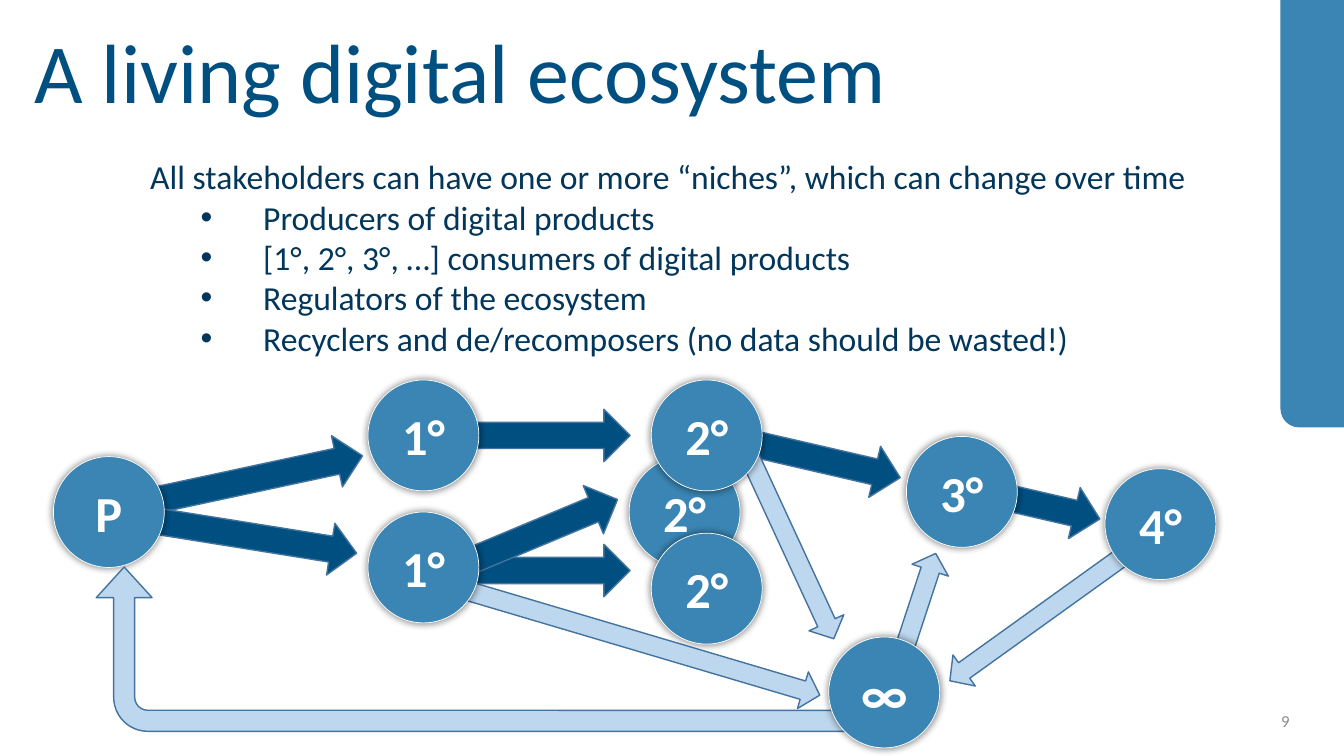
from lxml import etree
from pptx import Presentation
from pptx.dml.color import RGBColor
from pptx.enum.shapes import MSO_SHAPE
from pptx.enum.text import MSO_ANCHOR, MSO_AUTO_SIZE, PP_ALIGN
from pptx.oxml import parse_xml
from pptx.oxml.ns import nsdecls, qn
from pptx.util import Inches, Pt

NAVY, BLUE, PALE, EDGE = "004F81", "3A85B3", "BDD7EE", "43739E"
INK, GREY, WHITE = "02365A", "8C8C8C", "FFFFFF"
SIZE = 1.1
STRONG, SLIM = 0.52, 0.38


def tint(code):
    return RGBColor.from_string(code)


def place(item, box):
    item.left, item.top, item.width, item.height = map(Inches, box)


def style(par, size, color, align=PP_ALIGN.LEFT, bold=False):
    par.alignment = align
    font = par.font
    font.name, font.size, font.bold = "Calibri", Pt(size), bold
    font.color.rgb = tint(color)


def add_form(slide, kind, box, fill, line=None, width=1, turn=0):
    form = slide.shapes.add_shape(kind, *map(Inches, box))
    form.rotation = turn
    form.shadow.inherit = False
    form.fill.solid()
    form.fill.fore_color.rgb = tint(fill)
    if line:
        form.line.color.rgb = tint(line)
        form.line.width = Pt(width)
    else:
        form.line.fill.background()
    return form


def add_title(slide, box):
    title = slide.shapes.title
    place(title, box)
    frame = title.text_frame
    frame.text = "A living digital ecosystem"
    frame.auto_size = MSO_AUTO_SIZE.NONE
    frame.vertical_anchor = MSO_ANCHOR.TOP
    par = frame.paragraphs[0]
    style(par, 60, NAVY)
    par.line_spacing = 0.9


def add_list(slide, box):
    body = slide.placeholders[1]
    place(body, box)
    frame = body.text_frame
    frame.auto_size = MSO_AUTO_SIZE.NONE
    lines = [
        "All stakeholders can have one or more “niches”, which can change over time",
        "Producers of digital products",
        "[1°, 2°, 3°, …] consumers of digital products",
        "Regulators of the ecosystem",
        "Recyclers and de/recomposers (no data should be wasted!)",
    ]
    frame.text = "\n".join(lines)
    for rank, par in enumerate(frame.paragraphs):
        style(par, 24, INK)
        par.space_before = Pt(0)
        props = par._p.get_or_add_pPr()
        if rank:
            par.level = 1
            props.set("marL", str(Inches(1.12)))
            props.set("indent", str(Inches(-0.62)))
            face = etree.SubElement(props, qn("a:buFont"))
            face.set("typeface", "Arial")
            etree.SubElement(props, qn("a:buChar")).set("char", "•")
        else:
            props.set("marL", "0")
            props.set("indent", "0")
            etree.SubElement(props, qn("a:buNone"))


def add_node(slide, left, top, label, size=36):
    node = add_form(slide, MSO_SHAPE.OVAL, (left, top, SIZE, SIZE), BLUE, WHITE, 0.5)
    props = node._element.spPr
    props.remove(props.find(qn("a:effectLst")))
    props.append(parse_xml(
        f'<a:effectLst {nsdecls("a")}><a:outerShdw blurRad="63500" sx="102000" '
        'sy="102000" algn="ctr" rotWithShape="0"><a:prstClr val="black">'
        '<a:alpha val="40000"/></a:prstClr></a:outerShdw></a:effectLst>'))
    frame = node.text_frame
    frame.word_wrap = False
    frame.vertical_anchor = MSO_ANCHOR.MIDDLE
    frame.text = label
    style(frame.paragraphs[0], size, WHITE, PP_ALIGN.CENTER, True)


def add_arrow(slide, left, top, width, height, turn):
    fill = NAVY if height == STRONG else PALE
    box = (left, top, width, height)
    arrow = add_form(slide, MSO_SHAPE.RIGHT_ARROW, box, fill, EDGE, turn=turn)
    if height == SLIM:
        arrow.adjustments[1] = 0.459


def add_loop(slide, box):
    loop = add_form(slide, MSO_SHAPE.BENT_ARROW, box, PALE, EDGE, turn=270)
    for rank, value in enumerate((0.128, 0.17, 0.186, 0.208)):
        loop.adjustments[rank] = value


def add_web(slide, left, top):
    rear = [(5.71, 0.76, "2°"), (5.93, 1.52, "2°")]
    arrows = [
        (0.91, 0.72, 2.18, STRONG, 347.9),
        (1.01, 1.3, 2.01, STRONG, 9.1),
        (4.04, 0.29, 1.68, STRONG, 0),
        (4.04, 1.63, 1.68, STRONG, 0),
        (3.98, 1.25, 1.68, STRONG, 337.3),
        (6.74, 0.52, 1.68, STRONG, 13),
        (8.72, 0.93, 1.68, STRONG, 13),
        (7.55, 2.4, 1.83, SLIM, 288.2),
        (6.15, 1.36, 2.24, SLIM, 65.2),
        (3.83, 2.39, 3.85, SLIM, 16.5),
        (8.68, 2.14, 2.24, SLIM, 144.3),
    ]
    front = [
        (0, 0.76, "P"), (3.12, 0, "1°"), (3.12, 1.31, "1°"),
        (8.46, 0.56, "3°"), (10.43, 0.88, "4°"), (5.93, 0, "2°"),
    ]
    for x, y, label in rear:
        add_node(slide, left + x, top + y, label)
    for x, y, *rest in arrows:
        add_arrow(slide, left + x, top + y, *rest)
    for x, y, label in front:
        add_node(slide, left + x, top + y, label)
    add_loop(slide, (left + 3.41, top - 1.13, 1.63, 7.6))
    add_node(slide, left + 7.69, top + 2.55, "∞", 40)


def add_number(slide, box):
    frame = slide.shapes.add_textbox(*map(Inches, box)).text_frame
    frame.word_wrap = True
    frame.vertical_anchor = MSO_ANCHOR.MIDDLE
    frame.text = "9"
    style(frame.paragraphs[0], 12, GREY, PP_ALIGN.RIGHT)


def main():
    deck = Presentation()
    deck.slide_width, deck.slide_height = Inches(13.33), Inches(7.5)
    slide = deck.slides.add_slide(deck.slide_layouts[1])
    add_number(slide, (9.89, 6.95, 3, 0.4))
    add_list(slide, (1.39, 1.5, 10.95, 2.12))
    add_web(slide, 0.53, 3.77)
    add_title(slide, (0.24, 0.26, 11.5, 1.45))
    add_form(slide, MSO_SHAPE.ROUNDED_RECTANGLE, (12.7, -0.85, 1.11, 5.09), BLUE)
    deck.save("out.pptx")


if __name__ == "__main__":
    main()
